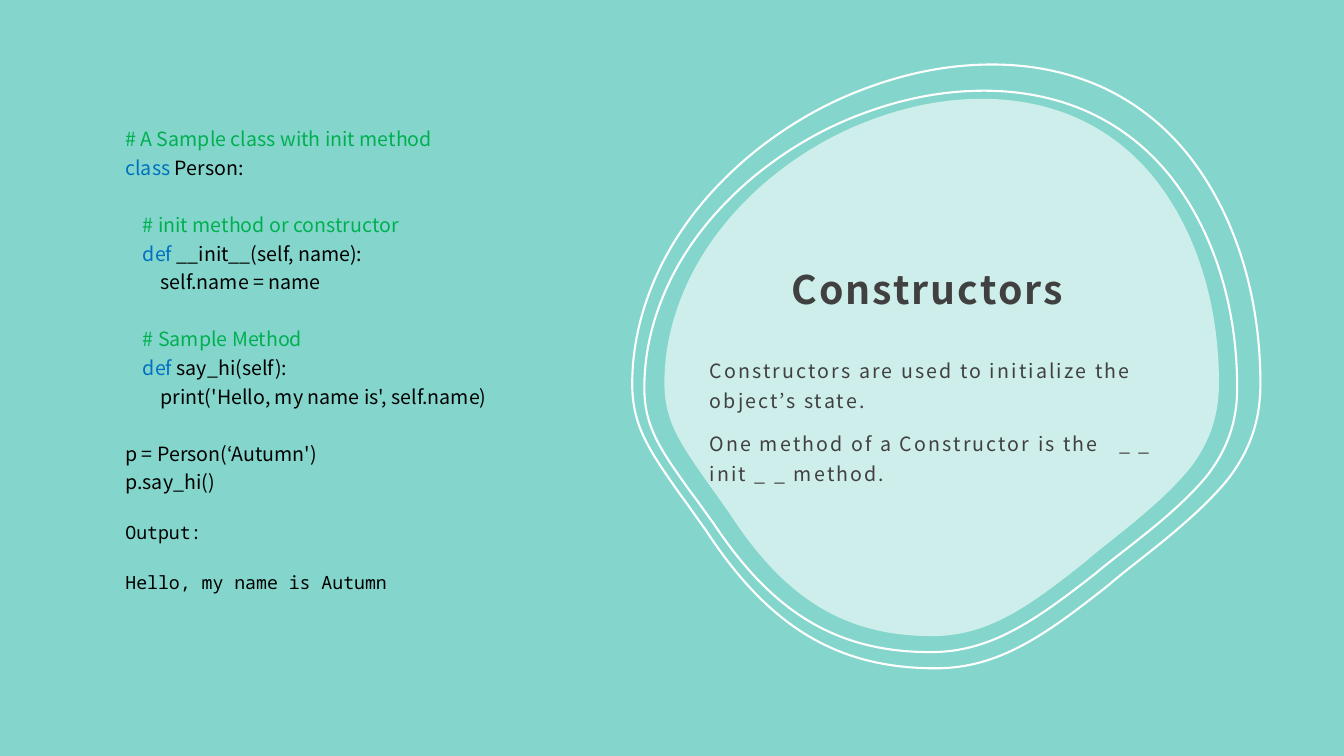
import pptx
import pptx.util
import pptx.dml.color
import pptx.enum.text
import pptx.oxml

WIDE, HIGH = pptx.util.Inches(13.33), pptx.util.Inches(7.5)
SANS, MONO = "Noto Sans CJK JP", "Noto Sans Mono"
MINT, WHITE, BLACK, GREY = "84D6CC", "FFFFFF", "000000", "404040"
GREEN, BLUE = "00B050", "0070C0"
NS = 'xmlns:a="http://schemas.openxmlformats.org/drawingml/2006/main"'

# Closed Bezier outline in percent of its box: two handles, then an end point
START = (57.3, 0)
CURVES = [
    ((63.7, 0), (69.8, 1.3), (75.3, 4)),
    ((80.3, 6.5), (84.6, 10), (88.3, 14.7)),
    ((95.8, 24.4), (100, 37.9), (100, 52.9)),
    ((100, 58.9), (98.4, 63.8), (94.9, 68.6)),
    ((91, 73.6), (85.4, 78.3), (79.5, 83.1)),
    ((78.3, 84.1), (77.2, 85), (76.1, 86)),
    ((65.8, 94.5), (58.4, 100), (48.3, 100)),
    ((32.7, 100), (21.8, 93.2), (11.7, 77.1)),
    ((10.3, 75.1), (9, 73.1), (7.7, 71.3)),
    ((2.6, 63.8), (0, 59.8), (0, 52.9)),
    ((0, 46.2), (1.6, 39.6), (4.7, 33.1)),
    ((7.7, 26.9), (12, 21.2), (17.7, 16)),
    ((23, 11.2), (29.5, 7), (36.3, 4.3)),
    ((43.2, 1.5), (50.2, 0), START),
]

# Each line of code: indent level, blank lines before it, coloured pieces
CODE = [
    (0, 0, [("# A Sample class with init method", GREEN)]),
    (0, 0, [("class", BLUE), (" Person:", BLACK)]),
    (1, 1, [("# init method or constructor", GREEN)]),
    (1, 0, [("def", BLUE), (" __init__(self, name):", BLACK)]),
    (2, 0, [("self.name = name", BLACK)]),
    (1, 1, [("# Sample Method", GREEN)]),
    (1, 0, [("def ", BLUE), ("say_hi(self):", BLACK)]),
    (2, 0, [("print('Hello, my name is', self.name)", BLACK)]),
    (0, 1, [("p = Person(‘Autumn')", BLACK)]),
    (0, 0, [("p.say_hi()", BLACK)]),
]
OUTPUT = ["Output:", "Hello, my name is Autumn"]


def tint(text):
    return pptx.dml.color.RGBColor.from_string(text)


def place(left, top, width, height):
    """Turn percents of the slide into lengths."""
    return [round(part * side / 100) for part, side in
            zip((left, top, width, height), (WIDE, HIGH, WIDE, HIGH))]


def blob(slide, box):
    """Draw the outline straight, then bend each side into its curve."""
    left, top, width, height = place(*box)

    def scale(spot):
        return round(spot[0] * width / 100), round(spot[1] * height / 100)

    pen = slide.shapes.build_freeform(*scale(START), scale=1.0)
    pen.add_line_segments([scale(curve[-1]) for curve in CURVES], close=True)
    shape = pen.convert_to_shape(left, top)
    shape.shadow.inherit = False
    sides = shape._element.findall(".//{*}lnTo")
    for side, curve in zip(sides, CURVES):
        spots = "".join('<a:pt x="%d" y="%d"/>' % scale(s) for s in curve)
        bend = f"<a:cubicBezTo {NS}>{spots}</a:cubicBezTo>"
        side.getparent().replace(side, pptx.oxml.parse_xml(bend))
    return shape


def ring(slide, box):
    shape = blob(slide, box)
    shape.fill.background()
    shape.line.color.rgb = tint(WHITE)
    shape.line.width = pptx.util.Pt(1.5)


def panel(slide, box, alpha):
    shape = blob(slide, box)
    shape.line.fill.background()
    shape.fill.solid()
    shape.fill.fore_color.rgb = tint(WHITE)
    color = shape.fill._xPr.find(".//{*}srgbClr")
    color.append(pptx.oxml.parse_xml(f'<a:alpha {NS} val="{alpha * 1000}"/>'))


def style(para, size, face, color=None):
    para.font.size = pptx.util.Pt(size)
    para.font.name = face
    if color:
        para.font.color.rgb = tint(color)


def stop(para, inches):
    """Set a tab stop, which comes before the default font."""
    spot = pptx.util.Inches(inches)
    tabs = pptx.oxml.parse_xml(
        f'<a:tabLst {NS}><a:tab pos="{spot}" algn="l"/></a:tabLst>')
    para._p.pPr.find("{*}defRPr").addprevious(tabs)


def prose(slide, box, lines, size, space, before=0, head=False):
    """Add a box of letter-spaced paragraphs."""
    frame = slide.shapes.add_textbox(*place(*box)).text_frame
    frame.word_wrap = True
    frame.margin_left = frame.margin_right = pptx.util.Inches(0.12)
    frame.margin_top = pptx.util.Inches(0.12)
    frame.margin_bottom = pptx.util.Inches(0.1)
    anchor = pptx.enum.text.MSO_ANCHOR
    frame.vertical_anchor = anchor.BOTTOM if head else anchor.TOP
    frame.text = "\n".join(lines)
    for para in frame.paragraphs:
        style(para, size, SANS, GREY)
        para.font.bold = head
        para.line_spacing = space
        para.space_before = pptx.util.Pt(before)
        if head:
            para.alignment = pptx.enum.text.PP_ALIGN.CENTER
        if "\t" in para.text:
            stop(para, 4.06)
        for run in para.runs:
            run.font._element.set("spc", "150")


def bare(cell):
    """Clear borders, fill and margins of a cell."""
    props = cell._tc.get_or_add_tcPr()
    for side in "LRTB":
        props.append(pptx.oxml.parse_xml(
            f'<a:ln{side} {NS} w="0"><a:noFill/></a:ln{side}>'))
    cell.fill.background()
    cell.margin_left = cell.margin_right = cell.margin_top = 0
    cell.margin_bottom = pptx.util.Inches(0.24)


def listing(slide, box):
    table = slide.shapes.add_table(1, 1, *place(*box)).table
    table.first_row = table.horz_banding = False
    cell = table.cell(0, 0)
    bare(cell)
    cell.vertical_anchor = pptx.enum.text.MSO_ANCHOR.MIDDLE
    frame = cell.text_frame
    for row, (level, gap, parts) in enumerate(CODE):
        para = frame.add_paragraph() if row else frame.paragraphs[0]
        style(para, 14, SANS)
        para.space_before = pptx.util.Pt(20.5 * gap)
        indent = pptx.util.Pt(12.5 * level)
        para._p.get_or_add_pPr().set("marL", str(indent))
        for text, color in parts:
            run = para.add_run()
            run.text = text
            run.font.color.rgb = tint(color)
    for text in OUTPUT:
        para = frame.add_paragraph()
        para.text = text
        style(para, 13, MONO, BLACK)
        para.space_before = pptx.util.Pt(17.8)


def main():
    deck = pptx.Presentation()
    deck.slide_width, deck.slide_height = WIDE, HIGH
    slide = deck.slides.add_slide(deck.slide_layouts[6])
    slide.background.fill.solid()
    slide.background.fill.fore_color.rgb = tint(MINT)

    ring(slide, (47.94, 12, 44.11, 74.27))
    ring(slide, (47.04, 8.53, 46.74, 79.87))
    panel(slide, (49.44, 13.07, 41.26, 71.07), 60)
    prose(slide, (51.88, 26.13, 35.03, 16.53), ["Constructors "],
          28, 1.3, head=True)
    prose(slide, (51.91, 45.07, 35.03, 27.6),
          ["Constructors are used to initialize the object’s state.",
           "One method of a Constructor is the\t_ _ init _ _ method."],
          14, 1.26, before=10)
    listing(slide, (9.33, 12, 33.98, 74.27))
    deck.save("out.pptx")


if __name__ == "__main__":
    main()
